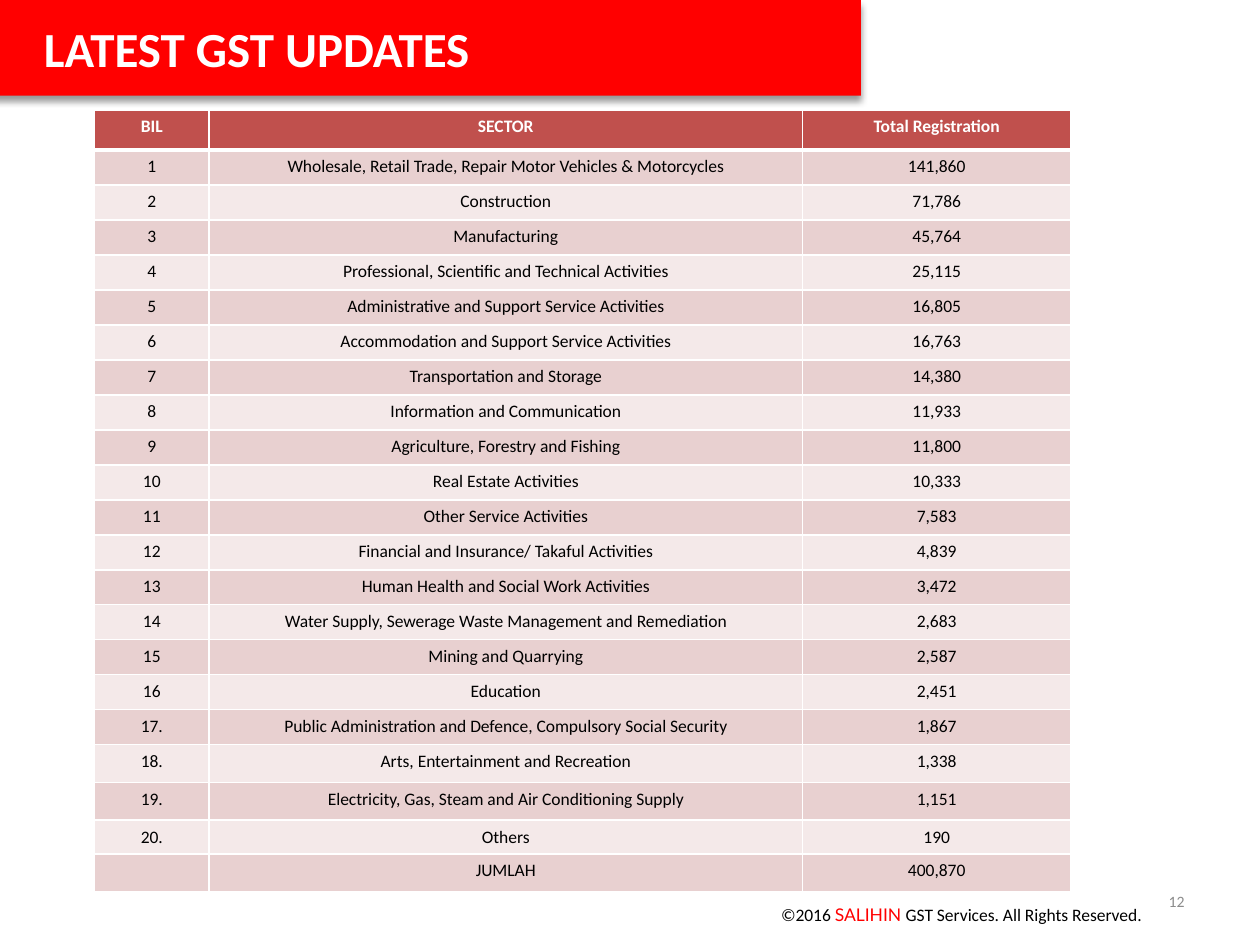
from lxml.etree import SubElement
from pptx import Presentation
from pptx.dml.color import RGBColor
from pptx.enum.shapes import MSO_SHAPE
from pptx.enum.text import MSO_ANCHOR, PP_ALIGN
from pptx.oxml import parse_xml
from pptx.oxml.ns import nsdecls, qn
from pptx.util import Pt

RED = RGBColor(0xFF, 0x00, 0x00)
WHITE = RGBColor(0xFF, 0xFF, 0xFF)
BLACK = RGBColor(0x00, 0x00, 0x00)
GREY = RGBColor(0x8C, 0x8C, 0x8C)
HEADER_FILL = RGBColor(0xC0, 0x50, 0x4D)
BANDS = (RGBColor(0xF4, 0xE9, 0xE9), RGBColor(0xE8, 0xD0, 0xD0))

# Content
TITLE = "LATEST GST UPDATES"
PAGE_NUMBER = "12"
COPYRIGHT = [
    ("©2016 ", "Calibri", BLACK),
    ("SALIHIN ", "Lato", RED),
    ("GST Services. All Rights Reserved.", "Calibri", BLACK),
]
ROWS = [
    ("BIL", "SECTOR", "Total Registration"),
    ("1", "Wholesale, Retail Trade, Repair Motor Vehicles & Motorcycles", "141,860"),
    ("2", "Construction", "71,786"),
    ("3", "Manufacturing", "45,764"),
    ("4", "Professional, Scientific and Technical Activities", "25,115"),
    ("5", "Administrative and Support Service Activities", "16,805"),
    ("6", "Accommodation and Support Service Activities", "16,763"),
    ("7", "Transportation and Storage", "14,380"),
    ("8", "Information and Communication", "11,933"),
    ("9", "Agriculture, Forestry and Fishing", "11,800"),
    ("10", "Real Estate Activities", "10,333"),
    ("11", "Other Service Activities", "7,583"),
    ("12", "Financial and Insurance/ Takaful Activities", "4,839"),
    ("13", "Human Health and Social Work Activities", "3,472"),
    ("14", "Water Supply, Sewerage Waste Management and Remediation", "2,683"),
    ("15", "Mining and Quarrying", "2,587"),
    ("16", "Education", "2,451"),
    ("17.", "Public Administration and Defence, Compulsory Social Security", "1,867"),
    ("18.", "Arts, Entertainment and Recreation", "1,338"),
    ("19.", "Electricity, Gas, Steam and Air Conditioning Supply", "1,151"),
    ("20.", "Others", "190"),
    ("", "JUMLAH", "400,870"),
]
COL_WIDTHS = (65.5, 339, 153.5)
ROW_HEIGHTS = [23] + [20] * 17 + [21.6, 21.6, 13, 21.6]


def add_run(p, text, size, color, font="Calibri", bold=False):
    r = p.add_run()
    r.text = text
    r.font.size = Pt(size)
    r.font.name = font
    r.font.bold = bold
    r.font.color.rgb = color


def add_text_box(slide, left, top, width, height):
    tf = slide.shapes.add_textbox(Pt(left), Pt(top), Pt(width), Pt(height)).text_frame
    tf.word_wrap = True
    tf.vertical_anchor = MSO_ANCHOR.MIDDLE
    return tf.paragraphs[0]


def set_borders(cell, bottom):
    tcPr = cell._tc.get_or_add_tcPr()
    widths = {"lnL": 1, "lnR": 1, "lnT": 1, "lnB": bottom}
    for i, (tag, width) in enumerate(widths.items()):
        tcPr.insert(i, parse_xml(
            f'<a:{tag} {nsdecls("a")} w="{Pt(width)}"><a:solidFill>'
            f'<a:srgbClr val="{WHITE}"/></a:solidFill></a:{tag}>'))


def add_sector_table(slide):
    table = slide.shapes.add_table(
        len(ROWS), len(COL_WIDTHS), Pt(54), Pt(62.8),
        Pt(sum(COL_WIDTHS)), Pt(sum(ROW_HEIGHTS))).table
    for col, width in zip(table.columns, COL_WIDTHS):
        col.width = Pt(width)
    for i, (values, height) in enumerate(zip(ROWS, ROW_HEIGHTS)):
        header = i == 0
        table.rows[i].height = Pt(height)
        for j, value in enumerate(values):
            cell = table.cell(i, j)
            cell.fill.solid()
            cell.fill.fore_color.rgb = HEADER_FILL if header else BANDS[i % 2]
            # A heavier rule separates the header from the body
            set_borders(cell, 3 if header or i == 1 and False else 1)
            if i == 1:
                cell._tc.tcPr.find(qn("a:lnT")).set("w", str(Pt(3)))
            p = cell.text_frame.paragraphs[0]
            p.alignment = PP_ALIGN.CENTER
            if value:
                add_run(p, value, 10, WHITE if header else BLACK, bold=header)
            else:
                SubElement(p._p, qn("a:endParaRPr")).set("sz", "1000")


def add_title_banner(slide):
    sp = slide.shapes.add_shape(MSO_SHAPE.RECTANGLE, Pt(-18), Pt(0), Pt(510), Pt(54.7))
    sp.fill.solid()
    sp.fill.fore_color.rgb = RED
    sp.line.fill.background()
    sp._element.spPr.append(parse_xml(
        f'<a:effectLst {nsdecls("a")}><a:outerShdw blurRad="{Pt(4)}" dist="{Pt(3)}" '
        f'dir="5400000" rotWithShape="0"><a:srgbClr val="{BLACK}">'
        '<a:alpha val="40000"/></a:srgbClr></a:outerShdw></a:effectLst>'))
    tf = sp.text_frame
    tf.word_wrap = True
    tf.vertical_anchor = MSO_ANCHOR.MIDDLE
    p = tf.paragraphs[0]
    p.alignment = PP_ALIGN.LEFT
    p.level = 1
    pPr = p._p.get_or_add_pPr()
    pPr.set("marL", str(Pt(36)))
    pPr.set("indent", "0")
    add_run(p, TITLE, 28, WHITE, bold=True)


prs = Presentation()
prs.slide_width, prs.slide_height = Pt(720), Pt(540)
slide = prs.slides.add_slide(prs.slide_layouts[6])

# Copyright line
p = add_text_box(slide, 439.2, 508.3, 231, 28.8)
for text, font, color in COPYRIGHT:
    add_run(p, text, 10, color, font)

add_sector_table(slide)
add_title_banner(slide)

# Page number
p = add_text_box(slide, 516, 500.5, 168, 28.8)
p.alignment = PP_ALIGN.RIGHT
add_run(p, PAGE_NUMBER, 9, GREY)

prs.save("out.pptx")
